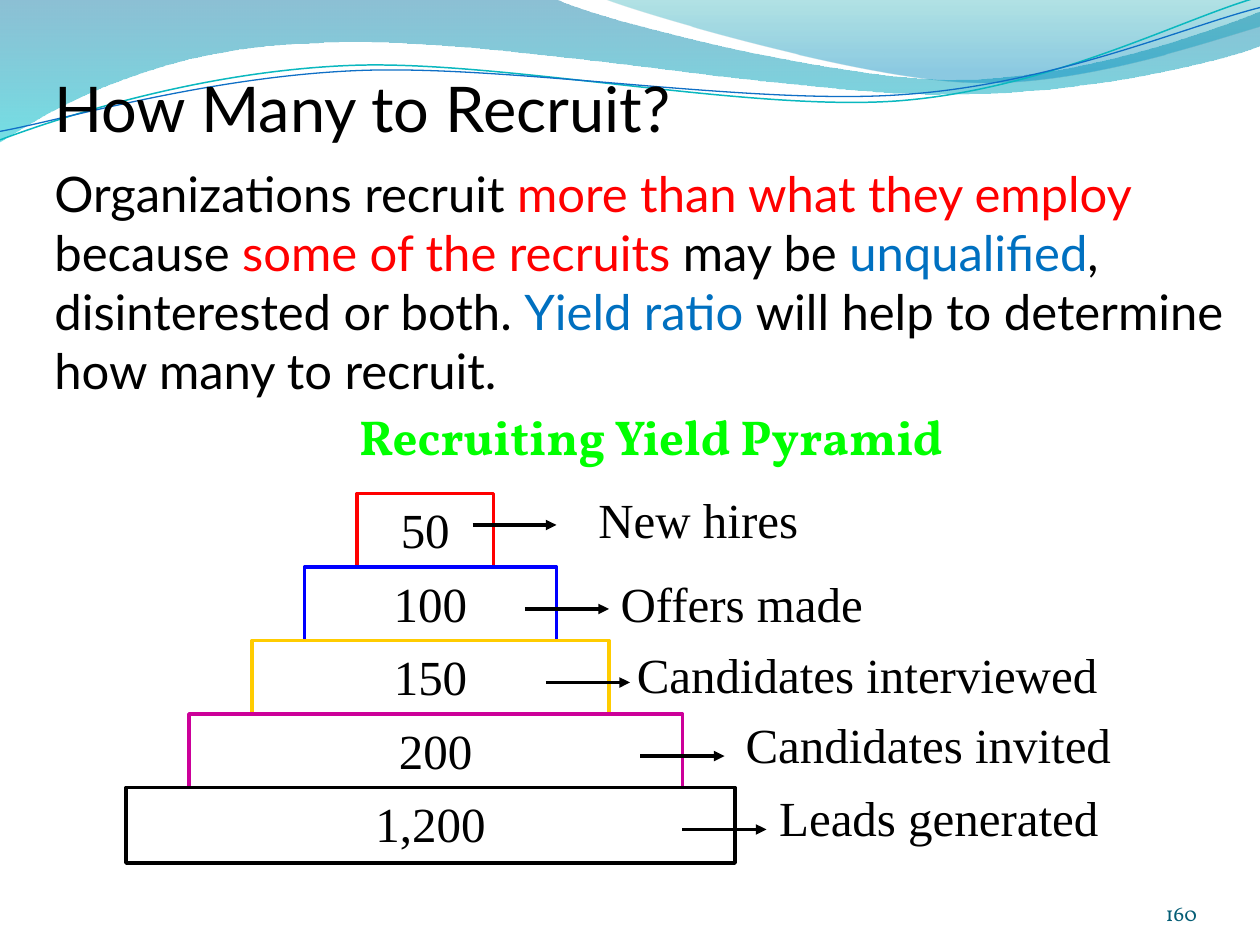
from lxml import etree
from pptx import Presentation
from pptx import util as u
from pptx.dml.color import RGBColor
from pptx.enum import shapes, text
from pptx.oxml.ns import qn

Pt = u.Pt
COLORS = {
    "black": "000000", "white": "FFFFFF", "red": "FF0000", "blue": "0000FF",
    "gold": "FFCC00", "magenta": "CC0099", "green": "00FF00", "link": "0070C0",
    "page": "045D75", "deep": "0074A1", "cyan": "00C6CF", "teal": "00A1A9",
    "sky": "008BBF", "aqua": "0AB8BF", "navy": "0F6FC6",
}
RGB = {name: RGBColor.from_string(value) for name, value in COLORS.items()}
ALIGN, ANCHOR = text.PP_ALIGN, text.MSO_ANCHOR

deck = Presentation()
deck.slide_width, deck.slide_height = Pt(720), Pt(540)
slide = deck.slides.add_slide(deck.slide_layouts[5])
parts = slide.shapes


def write(shape, pieces, font, size, align=ALIGN.LEFT, anchor=ANCHOR.TOP, bold=False):
    frame = shape.text_frame
    frame.word_wrap = True
    frame.auto_size = text.MSO_AUTO_SIZE.NONE
    frame.vertical_anchor = anchor
    paragraph = frame.paragraphs[0]
    paragraph.alignment = align
    for words, color in pieces:
        run = paragraph.add_run()
        run.text = words
        run.font.name, run.font.size, run.font.bold = font, Pt(size), bold
        run.font.color.rgb = RGB[color]


def draw_wave(start, segments, closed):
    outline = [(Pt(start[0]), Pt(start[1]))]
    for segment in segments:
        outline += [(Pt(x), Pt(y)) for x, y in zip(segment[::2], segment[1::2])]
    builder = parts.build_freeform(*outline[0], scale=1.0)
    builder.add_line_segments(outline[1:], close=closed)
    wave = builder.convert_to_shape()
    wave.shadow.inherit = False
    steps = iter(list(wave._element.spPr.iter(qn("a:lnTo"))))
    for segment in segments:
        first = next(steps)
        if len(segment) == 6:
            curve = etree.Element(qn("a:cubicBezTo"))
            first.addprevious(curve)
            for step in (first, next(steps), next(steps)):
                curve.append(step[0])
                step.getparent().remove(step)
    return wave


bands = [
    ((0, 0), [(317, -0.7), (343, 12, 478, 45.4, 546, 45.4), (614, 45.4, 690, 18.7, 720, 6.5),
              (720.7, 26), (708, 31.7, 626, 54.7, 537, 54), (448, 54, 275, 20, 185, 24.5),
              (93, 26, 33, 60, -0.7, 81.4)],
     [(0, "deep", 45), (1, "cyan", 55)]),
    ((345, -0.7), [(366.5, 8, 491, 44.6, 553.7, 46.8), (616.3, 49.7, 692, 23, 720, 15), (720, 0)],
     [(0, "teal", 30), (0.8, "sky", 45)]),
]
for start, segments, stops in bands:
    band = draw_wave(start, segments, True)
    band.line.fill.background()
    band.fill.gradient()
    band.fill.gradient_angle = 270
    for stop, (position, color, _) in zip(band.fill.gradient_stops, stops):
        stop.position = position
        stop.color.rgb = RGB[color]
    for tint, (_, _, opacity) in zip(band._element.spPr.iter(qn("a:srgbClr")), stops):
        etree.SubElement(tint, qn("a:alpha")).set("val", str(opacity * 1000))

strands = [
    ((-1.4, 63), [(33.8, 51.7, 114.1, 29.4, 199.8, 29.9), (284.9, 30.3, 425.8, 67.2, 512.4, 64.9),
                  (599, 62.3, 676.4, 25.7, 720.2, 15.5)], "aqua", 0.85),
    ((-1.1, 58.1), [(33, 53.7, 118.2, 32.6, 204.1, 33), (290.6, 33.4, 428.9, 63.8, 515.5, 61.4),
                    (601.4, 59.6, 678.4, 30, 721.4, 21.3)], "navy", 0.75),
]
for start, segments, color, weight in strands:
    strand = draw_wave(start, segments, False)
    strand.rotation = 357.3
    strand.fill.background()
    strand.line.color.rgb = RGB[color]
    strand.line.width = Pt(weight)

page = parts.add_textbox(Pt(624.2), Pt(500.4), Pt(59.8), Pt(28.8))
write(page, [("160", "page")], "Vollkorn", 12, ALIGN.RIGHT, ANCHOR.BOTTOM)
page.text_frame.margin_left = page.text_frame.margin_right = 0
page.text_frame.margin_top = page.text_frame.margin_bottom = 0

heading = parts.add_textbox(Pt(66), Pt(204), Pt(612), Pt(90))
write(heading, [("Recruiting Yield Pyramid", "green")], "Vollkorn", 28,
      ALIGN.CENTER, ANCHOR.MIDDLE, True)

levels = [
    ("50", "red", 204, 78, "New hires", (306, 276, 186), (270, 300)),
    ("100", "blue", 174, 144, "Offers made ", (277.3, 324, 300), (300, 348)),
    ("150", "gold", 144, 204, "Candidates interviewed ", (325, 364.5, 348), (312, 390)),
    ("200", "magenta", 108, 282, "Candidates invited ", (372, 405, 324), (366, 432)),
    ("1,200", "black", 72, 348, "Leads generated ", (399, 446.5, 282), (390, 474)),
]
for row, (count, color, left, width, *_) in enumerate(levels):
    tier = parts.add_shape(shapes.MSO_SHAPE.RECTANGLE, Pt(left), Pt(282 + 42 * row),
                           Pt(width), Pt(43.2))
    tier.shadow.inherit = False
    tier.fill.solid()
    tier.fill.fore_color.rgb = RGB["white"]
    tier.line.color.rgb = RGB[color]
    tier.line.width = Pt(2)
    write(tier, [(count, "black")], "Times New Roman", 28, ALIGN.CENTER, ANCHOR.MIDDLE)
    tier.text_frame.margin_bottom = Pt(6)

for *_, stage, (left, top, width), _ in levels:
    label = parts.add_textbox(Pt(left), Pt(top), Pt(width), Pt(41))
    write(label, [(stage, "black")], "Times New Roman", 28, ALIGN.CENTER)

for *_, (x, y) in levels:
    arrow = parts.add_connector(shapes.MSO_CONNECTOR.STRAIGHT, Pt(x), Pt(y), Pt(x + 48), Pt(y))
    arrow.line.color.rgb = RGB["black"]
    arrow.line.width = Pt(2)
    etree.SubElement(arrow.line._get_or_add_ln(), qn("a:tailEnd")).set("type", "triangle")
    etree.SubElement(arrow._element.spPr, qn("a:effectLst"))

title = parts.title
title.left, title.top, title.width, title.height = Pt(24), Pt(36), Pt(672), Pt(50.4)
write(title, [("How Many to Recruit?", "black")], "Lato", 36)
parts._spTree.append(title._element)

intro = parts.add_textbox(Pt(24), Pt(90), Pt(696), Pt(143))
write(intro, [
    ("Organizations recruit ", "black"), ("more than what they employ ", "red"),
    ("because ", "black"), ("some of the recruits", "red"), (" may be ", "black"),
    ("unqualified", "link"), (", disinterested or both. ", "black"), ("Yield ratio ", "link"),
    ("will help to determine how many to recruit.", "black"),
], "Lato", 28)

deck.save("out.pptx")
